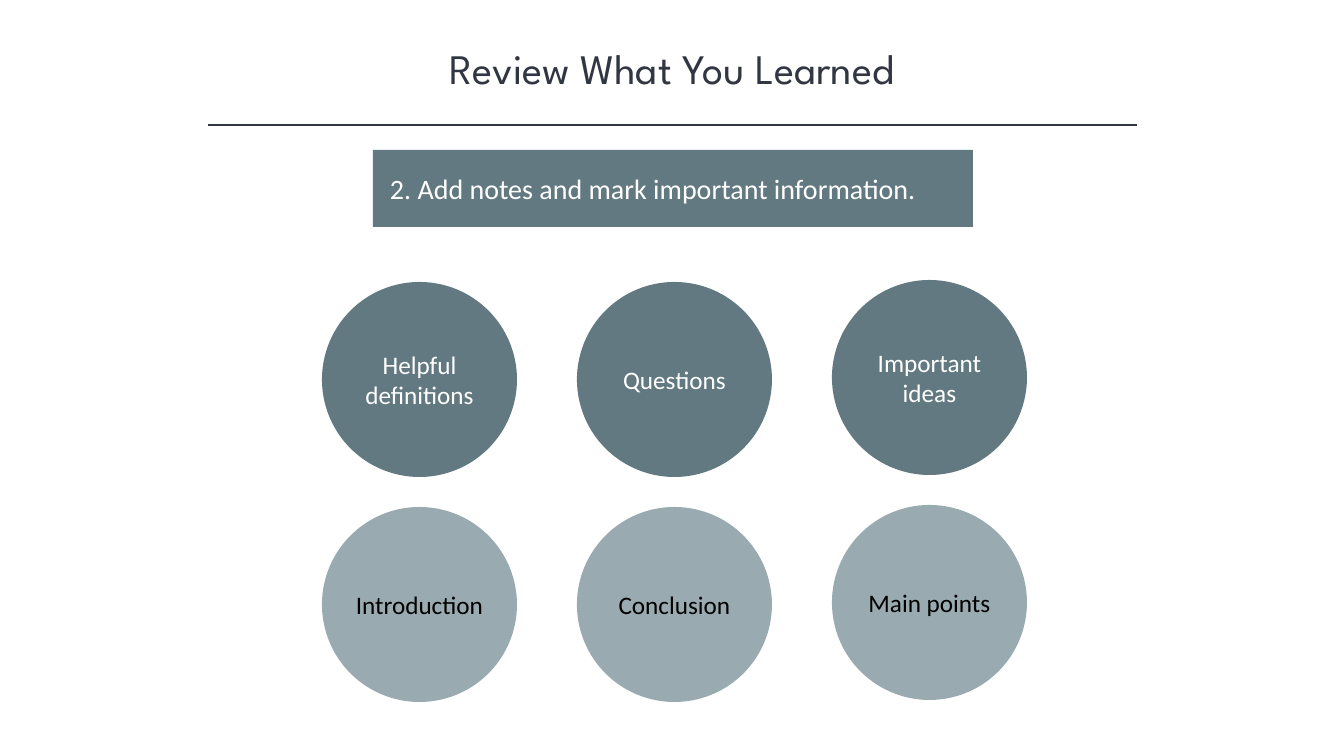
"""Build the review slide: a title, a task bar and two rows of circles."""
from dataclasses import dataclass

from pptx import Presentation
from pptx.dml.color import RGBColor
from pptx.enum.shapes import MSO_CONNECTOR, MSO_SHAPE
from pptx.enum.text import MSO_ANCHOR, MSO_AUTO_SIZE, PP_ALIGN
from pptx.oxml.ns import qn
from pptx.util import Emu, Pt
from lxml.etree import SubElement

SLATE, MIST, INK = "627981", "99ABB1", "323542"
WHITE, BLACK = "FFFFFF", "000000"


@dataclass(frozen=True)
class Block:
    text: str
    kind: MSO_SHAPE
    box: tuple[int, int, int, int]
    fill: str
    color: str
    size: int = 18
    align: PP_ALIGN = PP_ALIGN.CENTER
    inset: int = 0


def px(n: int) -> Emu:
    return Emu(round(n * 914400 / 100.8))


def rgb(code: str) -> RGBColor:
    return RGBColor.from_string(code)


def write(shape, text: str, face: str, size: int, color: str,
          align: PP_ALIGN, anchor: MSO_ANCHOR, inset: int) -> None:
    frame = shape.text_frame
    frame.text = text
    look = {
        "word_wrap": True,
        "auto_size": MSO_AUTO_SIZE.NONE,
        "vertical_anchor": anchor,
        "margin_left": px(inset),
        "margin_right": px(inset),
        "margin_top": 0,
        "margin_bottom": 0,
    }
    for name, value in look.items():
        setattr(frame, name, value)
    line = frame.paragraphs[0]
    line.alignment = align
    font = line.runs[0].font
    for name, value in {"name": face, "size": Pt(size)}.items():
        setattr(font, name, value)
    font.color.rgb = rgb(color)


def draw(slide, block: Block) -> None:
    shape = slide.shapes.add_shape(block.kind, *map(px, block.box))
    shape.shadow.inherit = False
    shape.fill.solid()
    shape.fill.fore_color.rgb = rgb(block.fill)
    shape.line.fill.background()
    write(shape, block.text, "Calibri", block.size, block.color,
          block.align, MSO_ANCHOR.MIDDLE, block.inset)


def head(slide, text: str) -> None:
    title = slide.shapes.title
    place = {"left": 168, "top": 37, "width": 1008, "height": 62}
    for name, value in place.items():
        setattr(title, name, px(value))
    write(title, text, "League Spartan", 30, INK,
          PP_ALIGN.CENTER, MSO_ANCHOR.MIDDLE, 10)
    rule = slide.shapes.add_connector(
        MSO_CONNECTOR.STRAIGHT, *map(px, (208, 125, 1137, 125)))
    rule.line.color.rgb = rgb(INK)
    rule.line.width = Pt(1)
    SubElement(rule.element.spPr, qn("a:effectLst"))


def main() -> None:
    deck = Presentation()
    deck.slide_width, deck.slide_height = px(1344), px(756)
    slide = deck.slides.add_slide(deck.slide_layouts[5])
    head(slide, "Review What You Learned")
    draw(slide, Block("2. Add notes and mark important information.",
                      MSO_SHAPE.RECTANGLE, (373, 150, 600, 77),
                      SLATE, WHITE, 20, PP_ALIGN.LEFT, 17))
    rows = [
        (SLATE, WHITE, ("Helpful definitions", "Questions", "Important ideas")),
        (MIST, BLACK, ("Introduction", "Conclusion", "Main points")),
    ]
    tops = (282, 282, 280)
    for row, (fill, color, names) in enumerate(rows):
        for col, (name, top) in enumerate(zip(names, tops)):
            box = (322 + 255 * col, top + 225 * row, 195, 195)
            draw(slide, Block(name, MSO_SHAPE.OVAL, box, fill, color))
    deck.save("out.pptx")


if __name__ == "__main__":
    main()
